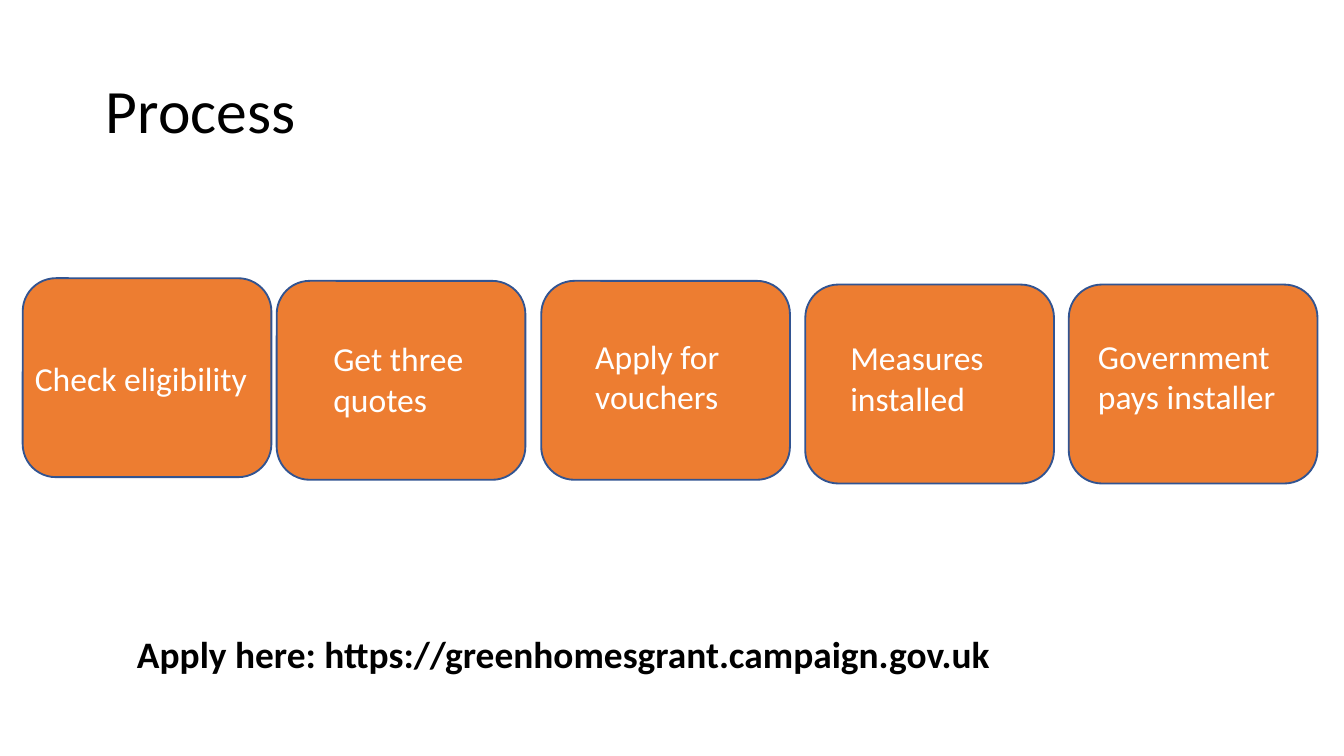
from pptx import Presentation
from pptx.dml.color import RGBColor
from pptx.enum.shapes import MSO_SHAPE
from pptx.enum.text import MSO_ANCHOR
from pptx.util import Cm, Pt

COLOURS = {"box": "ED7D31", "outline": "325491", "light": "FFFFFF", "dark": "000000"}

presentation = Presentation()
presentation.slide_width = Cm(25.4)
presentation.slide_height = Cm(14.29)
slide = presentation.slides.add_slide(presentation.slide_layouts[6])


def add_text(text, left, top, width, height, size=18, colour="light",
             bold=False, anchor=MSO_ANCHOR.TOP, line_spacing=1.0):
    """Add a wrapped text box with one paragraph per line of text."""
    text_box = slide.shapes.add_textbox(Cm(left), Cm(top), Cm(width), Cm(height))
    frame = text_box.text_frame
    frame.word_wrap = True
    frame.vertical_anchor = anchor
    frame.text = text
    for paragraph in frame.paragraphs:
        paragraph.line_spacing = line_spacing
        paragraph.font.name = "Calibri"
        paragraph.font.size = Pt(size)
        paragraph.font.bold = bold
        paragraph.font.color.rgb = RGBColor.from_string(COLOURS[colour])


# Title
add_text("Process", 1.75, 0.76, 21.9, 2.77, size=33, colour="dark",
         anchor=MSO_ANCHOR.MIDDLE, line_spacing=0.9)

# Process steps: box left and top, then label text, left, top, width and height
steps = [
    (0.43, 5.26, "Check eligibility", 0.41, 6.65, 5.26, 1.02),
    (5.23, 5.31, "Get three\nquotes", 6.05, 6.27, 5.26, 1.8),
    (10.23, 5.31, "Apply for\nvouchers", 11.0, 6.22, 5.26, 1.8),
    (15.22, 5.38, "Measures installed", 15.82, 6.25, 5.26, 1.8),
    (20.2, 5.38, "Government pays installer", 20.5, 6.22, 4.14, 1.8),
]
for box_left, box_top, label, *label_place in steps:
    box = slide.shapes.add_shape(MSO_SHAPE.ROUNDED_RECTANGLE,
                                 Cm(box_left), Cm(box_top), Cm(4.7), Cm(3.76))
    box.shadow.inherit = False
    box.fill.solid()
    box.fill.fore_color.rgb = RGBColor.from_string(COLOURS["box"])
    box.line.color.rgb = RGBColor.from_string(COLOURS["outline"])
    box.line.width = Pt(1)
    add_text(label, *label_place)

# Application address
add_text("Apply here: https://greenhomesgrant.campaign.gov.uk",
         2.34, 11.81, 19.79, 1.12, size=20, colour="dark", bold=True)

presentation.save("out.pptx")
